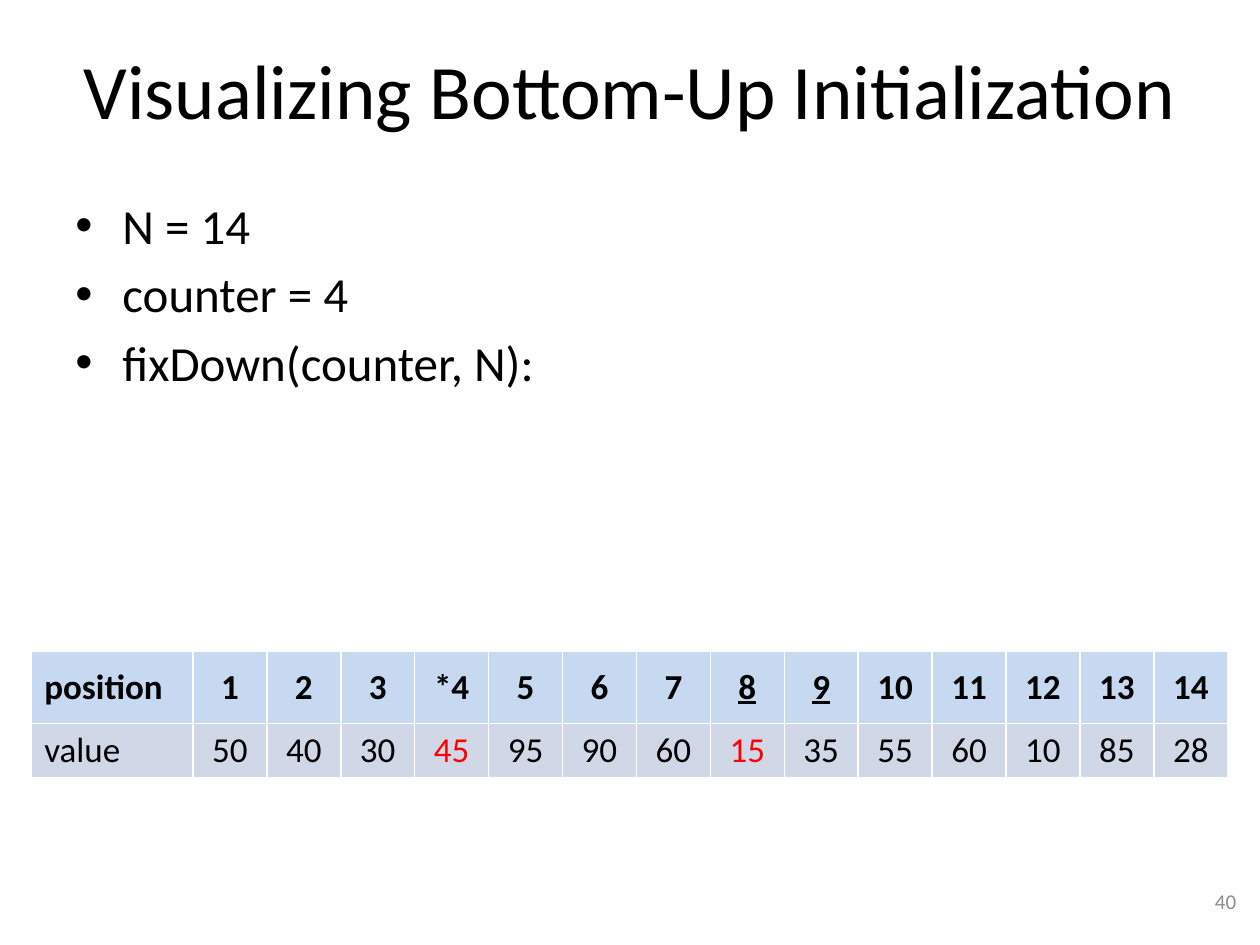
from lxml import etree
from pptx import Presentation
from pptx.dml.color import RGBColor
from pptx.enum.text import MSO_ANCHOR, PP_ALIGN
from pptx.oxml.ns import qn
from pptx.util import Cm, Pt

MID = MSO_ANCHOR.MIDDLE
LEFT, CENTER, RIGHT = PP_ALIGN.LEFT, PP_ALIGN.CENTER, PP_ALIGN.RIGHT


def color(code):
    return RGBColor.from_string(code)


def style(par, size, code="000000", align=LEFT, bold=False):
    par.alignment = align
    font = par.font
    font.name = "Calibri"
    font.size = Pt(size)
    font.bold = bold
    font.color.rgb = color(code)


deck = Presentation()
deck.slide_width, deck.slide_height = Cm(25.4), Cm(19.05)
slide = deck.slides.add_slide(deck.slide_layouts[5])

title = slide.shapes.title
title.left, title.top, title.width, title.height = Cm(1.27), Cm(0.2), Cm(22.86), Cm(3.18)
title.text_frame.text = "Visualizing Bottom-Up Initialization"
title.text_frame.vertical_anchor = MID
style(title.text_frame.paragraphs[0], 44, align=CENTER)

body = slide.shapes.add_textbox(Cm(1.27), Cm(3.81), Cm(22.86), Cm(6.55)).text_frame
body.word_wrap = True
body.text = "N = 14\ncounter = 4\nfixDown(counter, N):"
for par in body.paragraphs:
    style(par, 28)
    par.space_before = Pt(5.6)
    props = par._p.get_or_add_pPr()
    props.set("marL", str(Cm(0.95)))
    props.set("indent", str(-Cm(0.95)))
    etree.SubElement(props, qn("a:buFont")).set("typeface", "Arial")
    etree.SubElement(props, qn("a:buChar")).set("char", "•")
    props.append(props.find(qn("a:defRPr")))

values = [50, 40, 30, 45, 95, 90, 60, 15, 35, 55, 60, 10, 85, 28]
heads = ["*4" if n == 4 else str(n) for n in range(1, len(values) + 1)]
rows = [["position"] + heads, ["value"] + values]
fills = ["C6D9F1", "D0D8E8"]
lined = ["8", "9"]
moved = [4, 8]

table = slide.shapes.add_table(2, len(rows[0]), Cm(0.64), Cm(13.13), Cm(24.11), Cm(2.49)).table
for col in table.columns:
    col.width = Cm(1.49)
table.columns[0].width = Cm(3.25)
table.rows[0].height, table.rows[1].height = Cm(1.45), Cm(1.04)
for r, row in enumerate(rows):
    for c, value in enumerate(row):
        cell = table.cell(r, c)
        cell.text = str(value)
        cell.vertical_anchor = MID
        cell.fill.solid()
        cell.fill.fore_color.rgb = color(fills[r])
        par = cell.text_frame.paragraphs[0]
        code = "FF0000" if r == 1 and c in moved else "000000"
        style(par, 20, code, CENTER if c else LEFT, r == 0)
        if r == 0 and value in lined:
            par.font.underline = True
        for run in par.runs:
            run.font.bold = r == 0
            run.font.color.rgb = color(code)
            run.font.size = Pt(20)
            run.font.underline = par.font.underline

page = slide.shapes.add_textbox(Cm(19.25), Cm(17.65), Cm(5.92), Cm(1.02)).text_frame
page.word_wrap = True
page.vertical_anchor = MID
page.text = "40"
style(page.paragraphs[0], 12, "8C8C8C", RIGHT)

deck.save("out.pptx")
